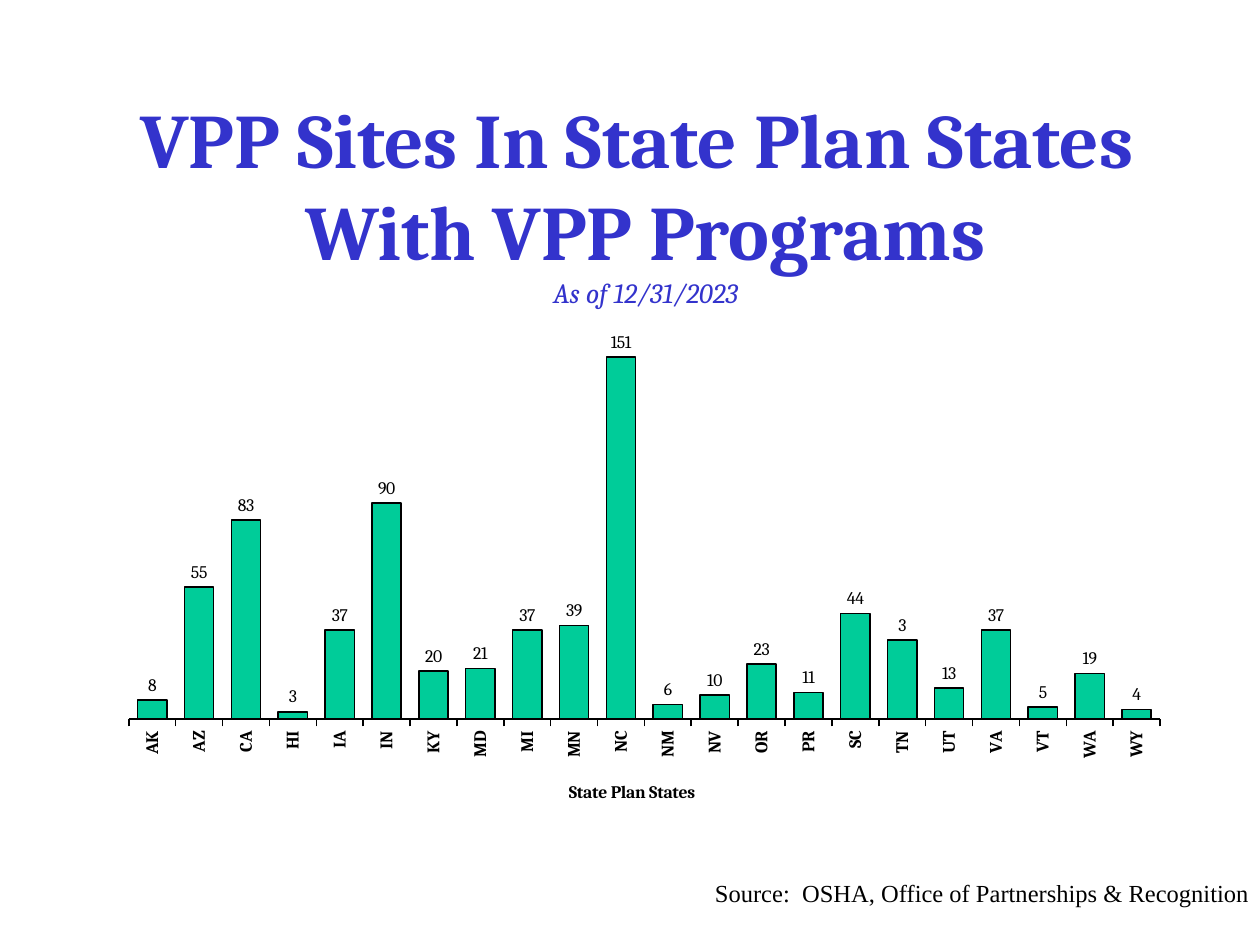
from lxml.etree import SubElement
from pptx import Presentation
from pptx.chart.data import CategoryChartData
from pptx.dml.color import RGBColor
from pptx.enum.chart import XL_CHART_TYPE, XL_LABEL_POSITION, XL_TICK_LABEL_POSITION, XL_TICK_MARK
from pptx.enum.text import MSO_ANCHOR, MSO_AUTO_SIZE, PP_ALIGN
from pptx.oxml.ns import qn
from pptx.util import Pt

SITES = {
    "AK": 8, "AZ": 55, "CA": 83, "HI": 3, "IA": 37, "IN": 90, "KY": 20, "MD": 21,
    "MI": 37, "MN": 39, "NC": 151, "NM": 6, "NV": 10, "OR": 23, "PR": 11, "SC": 44,
    "TN": 33, "UT": 13, "VA": 37, "VT": 5, "WA": 19, "WY": 4,
}
CUSTOM_LABELS = {"TN": "3"}
CHART_TEXT_SIZE = 10.1


def color(value):
    return RGBColor.from_string(value)


def format_font(font, size, name="Cambria", fill="000000", bold=False, italic=False):
    font.size = Pt(size)
    font.name = name
    font.color.rgb = color(fill)
    font.bold = bold
    font.italic = italic


def add_text(paragraph, text, align=PP_ALIGN.CENTER, **font_format):
    paragraph.alignment = align
    for index, line in enumerate(text.split("\n")):
        if index:
            paragraph.add_line_break()
        if line:
            run = paragraph.add_run()
            run.text = line
            format_font(run.font, **font_format)


def prepare_frame(shape, anchor):
    frame = shape.text_frame
    frame.word_wrap = True
    frame.auto_size = MSO_AUTO_SIZE.NONE
    frame.vertical_anchor = anchor
    frame.margin_left = frame.margin_right = frame.margin_top = frame.margin_bottom = 0
    return frame


def format_line(line):
    line.color.rgb = color("000000")
    line.width = Pt(0.88)


def set_layout(element, index, **settings):
    for old_layout in element.findall(qn("c:layout")):
        element.remove(old_layout)
    layout = SubElement(element, qn("c:layout"))
    element.insert(index, layout)
    manual = SubElement(layout, qn("c:manualLayout"))
    for tag, value in settings.items():
        SubElement(manual, qn("c:" + tag)).set("val", str(value))


def add_title(slide):
    title = slide.shapes.title
    title.left, title.top, title.width, title.height = Pt(48), Pt(52), Pt(642), Pt(125)
    paragraph = prepare_frame(title, MSO_ANCHOR.MIDDLE).paragraphs[0]
    add_text(paragraph, "VPP Sites In State Plan States \nWith VPP Programs\n",
             size=44, fill="3333CC", bold=True)
    add_text(paragraph, "As of 12/31/2023", size=16, fill="3333CC", italic=True)


def format_category_axis(axis):
    axis.has_major_gridlines = False
    axis.major_tick_mark = XL_TICK_MARK.OUTSIDE
    axis.tick_label_position = XL_TICK_LABEL_POSITION.LOW
    format_line(axis.format.line)
    format_font(axis.tick_labels.font, CHART_TEXT_SIZE, bold=True)
    axis._element.find(qn("c:txPr")).find(qn("a:bodyPr")).set("rot", "-5400000")
    add_text(axis.axis_title.text_frame.paragraphs[0], "State Plan States ",
             size=CHART_TEXT_SIZE, bold=True)
    set_layout(axis._element.find(qn("c:title")), 1,
               xMode="edge", yMode="edge", x=0.44, y=0.89)


def format_value_axis(axis):
    axis.minimum_scale = 0
    axis.maximum_scale = 160
    axis.has_major_gridlines = False
    axis.major_tick_mark = XL_TICK_MARK.NONE
    axis.tick_label_position = XL_TICK_LABEL_POSITION.NONE
    axis.format.line.fill.background()


def format_columns(plot):
    plot.gap_width = 60
    plot.vary_by_categories = False
    series = plot.series[0]
    series.format.fill.solid()
    series.format.fill.fore_color.rgb = color("00CC99")
    format_line(series.format.line)
    labels = series.data_labels
    labels.show_value = True
    labels.number_format = "General"
    labels.number_format_is_linked = False
    labels.position = XL_LABEL_POSITION.OUTSIDE_END
    format_font(labels.font, CHART_TEXT_SIZE)
    for state, text in CUSTOM_LABELS.items():
        label = series.points[list(SITES).index(state)].data_label
        add_text(label.text_frame.paragraphs[0], text, size=CHART_TEXT_SIZE)
        label.position = XL_LABEL_POSITION.OUTSIDE_END


def add_sites_chart(slide):
    data = CategoryChartData()
    data.categories = list(SITES)
    data.add_series("Series 1", list(SITES.values()))
    chart = slide.shapes.add_chart(XL_CHART_TYPE.COLUMN_CLUSTERED,
                                   Pt(54), Pt(156), Pt(612), Pt(324), data).chart
    chart.has_title = False
    chart.has_legend = False
    format_font(chart.font, CHART_TEXT_SIZE, bold=True)
    format_category_axis(chart.category_axis)
    format_value_axis(chart.value_axis)
    format_columns(chart.plots[0])
    plot_area = chart._chartSpace.find(qn("c:chart")).find(qn("c:plotArea"))
    set_layout(plot_area, 0, layoutTarget="inner", xMode="edge", yMode="edge",
               x=0.032, y=0.11, w=0.963, h=0.677)


def add_source(slide):
    box = slide.shapes.add_textbox(Pt(384), Pt(502), Pt(330), Pt(37))
    paragraph = prepare_frame(box, MSO_ANCHOR.TOP).paragraphs[0]
    add_text(paragraph, "Source:  OSHA, Office of Partnerships & Recognition",
             align=PP_ALIGN.RIGHT, size=14, name="Times New Roman")


def main():
    presentation = Presentation()
    presentation.slide_width, presentation.slide_height = Pt(720), Pt(540)
    slide = presentation.slides.add_slide(presentation.slide_layouts[5])
    add_title(slide)
    add_sites_chart(slide)
    add_source(slide)
    presentation.save("out.pptx")


if __name__ == "__main__":
    main()
